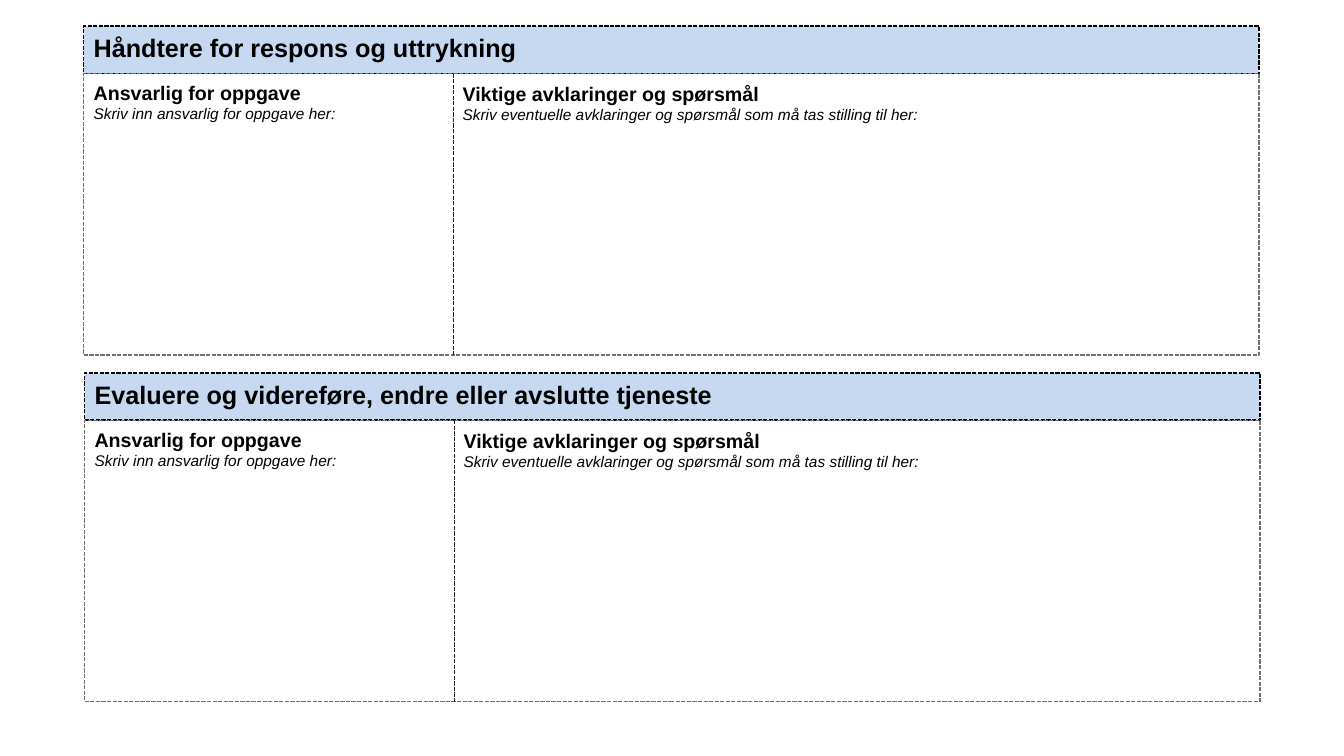
from pptx import Presentation
from pptx.dml.color import RGBColor
from pptx.enum.dml import MSO_LINE_DASH_STYLE as DashStyle
from pptx.enum.shapes import MSO_CONNECTOR as Connector, MSO_SHAPE as Shape
from pptx.enum.text import MSO_AUTO_SIZE as AutoSize
from pptx.oxml.ns import qn
from pptx.util import Pt

SECTION_WIDTH = 839.5
HEADER_HEIGHT = 33.8
BODY_HEIGHT = 201
DIVIDER_OFFSET = 264.2

SECTIONS = [
    (59.8, 18.7, "Håndtere for respons og uttrykning"),
    (60.5, 266.4, "Evaluere og videreføre, endre eller avslutte tjeneste"),
]
# offset from section left, offset from section top, width, height, heading, prompt
FIELDS = [
    (0, 35.6, 263.5, 37.4, "Ansvarlig for oppgave", "Skriv inn ansvarlig for oppgave her:"),
    (263.5, 36.3, 543.6, 38.9, "Viktige avklaringer og spørsmål",
     "Skriv eventuelle avklaringer og spørsmål som må tas stilling til her:"),
]


def color(hex_value):
    return RGBColor.from_string(hex_value)


class FormSlide:
    font_name = "Arial"
    text_color = "000000"
    header_fill = "C6D9F1"
    header_line = "000000"
    body_line = "6F6F6F"
    divider_line = "202020"

    def __init__(self, slide):
        self.shapes = slide.shapes

    def style_line(self, line, line_color):
        line.color.rgb = color(line_color)
        line.width = Pt(1)
        line.dash_style = DashStyle.SQUARE_DOT

    def box(self, left, top, height, line_color, fill_color=None):
        shape = self.shapes.add_shape(
            Shape.RECTANGLE, Pt(left), Pt(top), Pt(SECTION_WIDTH), Pt(height))
        shape.shadow.inherit = False
        if fill_color:
            shape.fill.solid()
            shape.fill.fore_color.rgb = color(fill_color)
        else:
            shape.fill.background()
        self.style_line(shape.line, line_color)

    def divider(self, x, top, height):
        connector = self.shapes.add_connector(
            Connector.STRAIGHT, Pt(x), Pt(top), Pt(x), Pt(top + height))
        self.style_line(connector.line, self.divider_line)
        properties = connector._element.spPr
        properties.append(properties.makeelement(qn("a:effectLst"), {}))

    def text(self, left, top, width, height, heading, size, prompt=None):
        """Add a bold heading, with an italic prompt below it if given."""
        text_frame = self.shapes.add_textbox(
            Pt(left), Pt(top), Pt(width), Pt(height)).text_frame
        text_frame.word_wrap = True
        text_frame.auto_size = AutoSize.SHAPE_TO_FIT_TEXT
        text_frame.text = f"{heading}\n{prompt}" if prompt else heading
        for index, paragraph in enumerate(text_frame.paragraphs):
            font = paragraph.runs[0].font
            font.name = self.font_name
            font.size = Pt(11 if index else size)
            font.bold = index == 0
            font.italic = index > 0
            font.color.rgb = color(self.text_color)

    def section(self, left, top, title):
        body_top = top + HEADER_HEIGHT
        self.box(left, top, HEADER_HEIGHT, self.header_line, self.header_fill)
        self.text(left, top + 0.7, 543.6, 29, title, 18)
        self.box(left, body_top, BODY_HEIGHT, self.body_line)
        self.divider(left + DIVIDER_OFFSET, body_top, BODY_HEIGHT)
        for x_offset, y_offset, width, height, heading, prompt in FIELDS:
            self.text(left + x_offset, top + y_offset, width, height, heading, 14, prompt)


def main():
    presentation = Presentation()
    presentation.slide_width = Pt(960)
    presentation.slide_height = Pt(540)
    blank_layout = presentation.slide_layouts[6]
    form = FormSlide(presentation.slides.add_slide(blank_layout))
    for left, top, title in SECTIONS:
        form.section(left, top, title)
    presentation.save("out.pptx")


if __name__ == "__main__":
    main()
